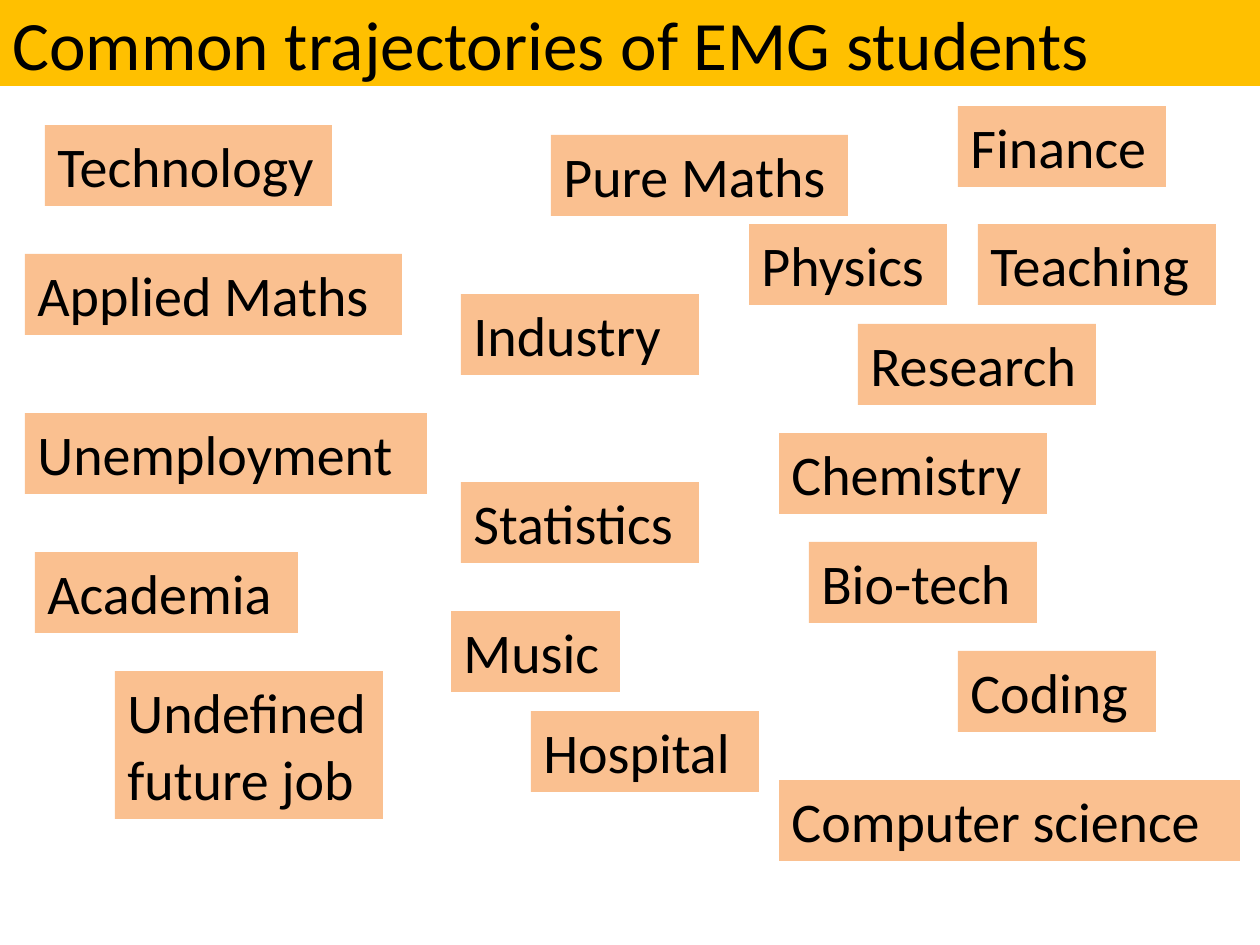
import pptx
import pptx.util
import pptx.dml.color
import pptx.enum.text

PX_PER_INCH = 126
PAGE_WIDTH, PAGE_HEIGHT = 1260, 945
LABEL_HEIGHT, TALL_LABEL_HEIGHT = 81, 148
FONT = "Calibri"
COLORS = {"banner": "FFC000", "label": "FAC090", "text": "000000"}

LABELS = [
    ("Pure Maths", 551, 135, 297),
    ("Applied Maths", 25, 254, 377),
    ("Statistics", 461, 482, 238),
    ("Physics", 749, 224, 198),
    ("Chemistry", 779, 433, 268),
    ("Computer science", 779, 780, 461),
    ("Bio-tech", 809, 542, 228),
    ("Music", 451, 611, 169),
    ("Technology", 45, 125, 287),
    ("Industry", 461, 294, 238),
    ("Finance", 958, 106, 208),
    ("Coding", 958, 651, 198),
    ("Academia", 35, 552, 263),
    ("Hospital", 531, 711, 228),
    ("Research", 858, 324, 238),
    ("Unemployment", 25, 413, 402),
    ("Undefined future job", 115, 671, 268),
    ("Teaching", 978, 224, 238),
]


def px(length):
    return pptx.util.Emu(round(length * 914400 / PX_PER_INCH))


def add_text(page, text, box, *, size, fill, anchor):
    shape = page.shapes.add_textbox(*map(px, box))
    shape.fill.solid()
    shape.fill.fore_color.rgb = pptx.dml.color.RGBColor.from_string(COLORS[fill])
    frame = shape.text_frame
    frame.word_wrap = True
    frame.vertical_anchor = anchor
    para = frame.paragraphs[0]
    span = para.add_run()
    span.text = text
    span.font.name = FONT
    span.font.size = pptx.util.Pt(size)
    span.font.color.rgb = pptx.dml.color.RGBColor.from_string(COLORS["text"])
    return shape


def add_banner(page, box):
    add_text(page, "Common trajectories of EMG students", box, size=39.6,
             fill="banner", anchor=pptx.enum.text.MSO_ANCHOR.MIDDLE)


def add_labels(page, box):
    for text, left, top, width in LABELS:
        height = TALL_LABEL_HEIGHT if text.startswith("Undefined") else LABEL_HEIGHT
        shape = add_text(page, text, (box[0] + left, box[1] + top, width, height),
                         size=32, fill="label", anchor=pptx.enum.text.MSO_ANCHOR.TOP)
        shape.text_frame.auto_size = pptx.enum.text.MSO_AUTO_SIZE.SHAPE_TO_FIT_TEXT


def main():
    deck = pptx.Presentation()
    deck.slide_width, deck.slide_height = px(PAGE_WIDTH), px(PAGE_HEIGHT)
    page = deck.slides.add_slide(deck.slide_layouts[6])
    add_banner(page, (0, 0, PAGE_WIDTH, 86))
    add_labels(page, (0, 0, PAGE_WIDTH, PAGE_HEIGHT))
    deck.save("out.pptx")


if __name__ == "__main__":
    main()
